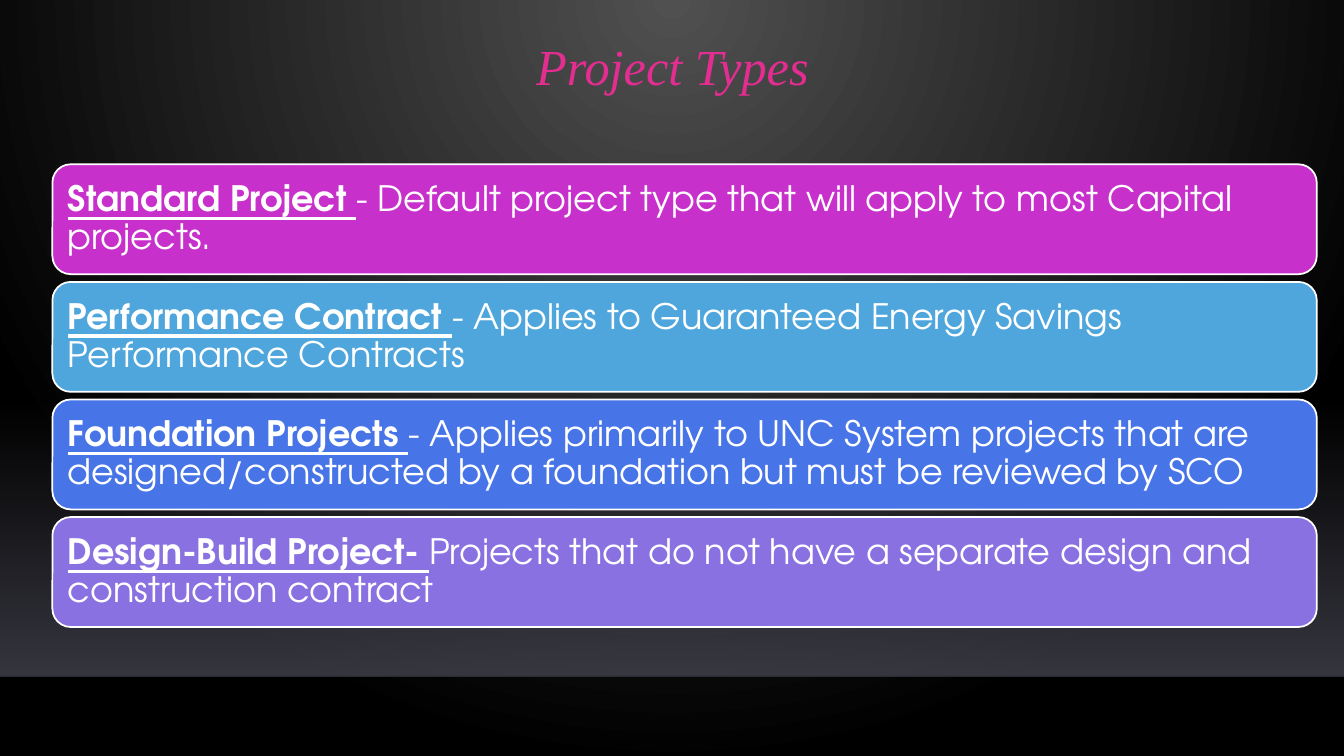
from dataclasses import dataclass

from lxml.etree import SubElement
from pptx import Presentation
from pptx.dml.color import RGBColor
from pptx.enum.shapes import MSO_CONNECTOR, MSO_SHAPE
from pptx.enum.text import MSO_ANCHOR, PP_ALIGN
from pptx.oxml import parse_xml
from pptx.oxml.ns import nsdecls, qn
from pptx.util import Inches, Pt


@dataclass(frozen=True)
class Theme:
    title_font: str = "Times New Roman"
    body_font: str = "TeX Gyre Adventor"
    title_size: int = 36
    body_size: int = 25
    title: str = "E32D91"
    white: str = "FFFFFF"
    glow: str = "505050"
    black: str = "000000"
    floor: str = "454551"
    floor_edge: str = "000001"


@dataclass(frozen=True)
class Box:
    left: float
    top: float
    width: float
    height: float

    def lengths(self):
        return [Inches(v) for v in (self.left, self.top, self.width, self.height)]


THEME = Theme()
PAGE = Box(0, 0, 13.33, 7.5)
PROJECT_TYPES = [
    ("C830CC", "Standard Project ",
     "- Default project type that will apply to most Capital projects."),
    ("4EA6DC", "Performance Contract ",
     "- Applies to Guaranteed Energy Savings Performance Contracts"),
    ("4775E7", "Foundation Projects ",
     "- Applies primarily to UNC System projects that are "
     "designed/constructed by a foundation but must be reviewed by SCO"),
    ("8971E1", "Design-Build Project- ",
     "Projects that do not have a separate design and construction contract"),
]


def add_text(para, text, *, font, size, color, bold=False, italic=False, underline=False):
    span = para.add_run()
    span.text = text
    span.font.name = font
    span.font.size = Pt(size)
    span.font.color.rgb = RGBColor.from_string(color)
    span.font.bold = bold
    span.font.italic = italic
    span.font.underline = underline


def gradient(stops, direction):
    """Return a gradient fill element; stops are (position, colour, opacity) in percent."""
    stop_xml = "".join(
        f'<a:gs pos="{position * 1000}"><a:srgbClr val="{color}">'
        f'<a:alpha val="{opacity * 1000}"/></a:srgbClr></a:gs>'
        for position, color, opacity in stops
    )
    return parse_xml(
        f'<a:gradFill {nsdecls("a")} rotWithShape="1">'
        f"<a:gsLst>{stop_xml}</a:gsLst>{direction}</a:gradFill>"
    )


def replace_gradient(fill, owner, new_gradient):
    fill.gradient()
    old = next(owner.iter(qn("a:gradFill")))
    old.getparent().replace(old, new_gradient)


def paint_background(page):
    direction = ('<a:path path="circle"><a:fillToRect l="43000" t="0" '
                 'r="43000" b="100000"/></a:path>')
    stops = [(0, THEME.glow, 100), (100, THEME.black, 100)]
    replace_gradient(page.background.fill, page.element, gradient(stops, direction))


def add_floor(page, box):
    """Add the fading band and the faint line along its lower edge."""
    band = page.shapes.add_shape(MSO_SHAPE.RECTANGLE, *box.lengths())
    band.shadow.inherit = False
    band.line.fill.background()
    stops = [(0, THEME.floor, 0), (100, THEME.floor, 80)]
    replace_gradient(band.fill, band.element,
                     gradient(stops, '<a:lin ang="5400000" scaled="0"/>'))

    bottom = Inches(box.top + box.height)
    edge = page.shapes.add_connector(
        MSO_CONNECTOR.STRAIGHT, Inches(box.left), bottom,
        Inches(box.left + box.width), bottom)
    edge.line.width = Pt(1)
    edge.line.color.rgb = RGBColor.from_string(THEME.floor_edge)
    color = next(edge.element.iter(qn("a:srgbClr")))
    SubElement(color, qn("a:alpha")).set("val", "20000")
    SubElement(edge.element.spPr, qn("a:effectLst"))


def place_title(page, box, text):
    title = page.shapes.title
    title.left, title.top, title.width, title.height = box.lengths()
    title.text_frame.vertical_anchor = MSO_ANCHOR.MIDDLE
    para = title.text_frame.paragraphs[0]
    para.alignment = PP_ALIGN.CENTER
    para.line_spacing = 0.9
    add_text(para, text, font=THEME.title_font, size=THEME.title_size,
             color=THEME.title, italic=True)


def add_card(page, box, color, name, description):
    card = page.shapes.add_shape(MSO_SHAPE.ROUNDED_RECTANGLE, *box.lengths())
    card.shadow.inherit = False
    card.fill.solid()
    card.fill.fore_color.rgb = RGBColor.from_string(color)
    card.line.color.rgb = RGBColor.from_string(THEME.white)
    card.line.width = Pt(1.25)

    frame = card.text_frame
    frame.word_wrap = True
    frame.vertical_anchor = MSO_ANCHOR.MIDDLE
    frame.margin_left = frame.margin_right = Inches(0.1)
    frame.margin_top = frame.margin_bottom = Inches(0.1)
    para = frame.paragraphs[0]
    para.alignment = PP_ALIGN.LEFT
    para.line_spacing = 0.9
    style = dict(font=THEME.body_font, size=THEME.body_size, color=THEME.white)
    add_text(para, name, bold=True, underline=True, **style)
    add_text(para, description, **style)


def add_card_stack(page, box, project_types, card_height=1.09):
    """Spread the cards evenly from the top to the bottom of the box."""
    pitch = (box.height - card_height) / (len(project_types) - 1)
    for index, project_type in enumerate(project_types):
        card_box = Box(box.left, box.top + index * pitch, box.width, card_height)
        add_card(page, card_box, *project_type)


def main():
    deck = Presentation()
    deck.slide_width, deck.slide_height = Inches(PAGE.width), Inches(PAGE.height)
    page = deck.slides.add_slide(deck.slide_layouts.get_by_name("Title Only"))
    paint_background(page)
    add_floor(page, Box(0, 3.96, PAGE.width, 2.75))
    place_title(page, Box(0.92, 0.11, 11.5, 1.16), "Project Types")
    add_card_stack(page, Box(0.52, 1.63, 12.54, 4.59), PROJECT_TYPES)
    deck.save("out.pptx")


if __name__ == "__main__":
    main()
